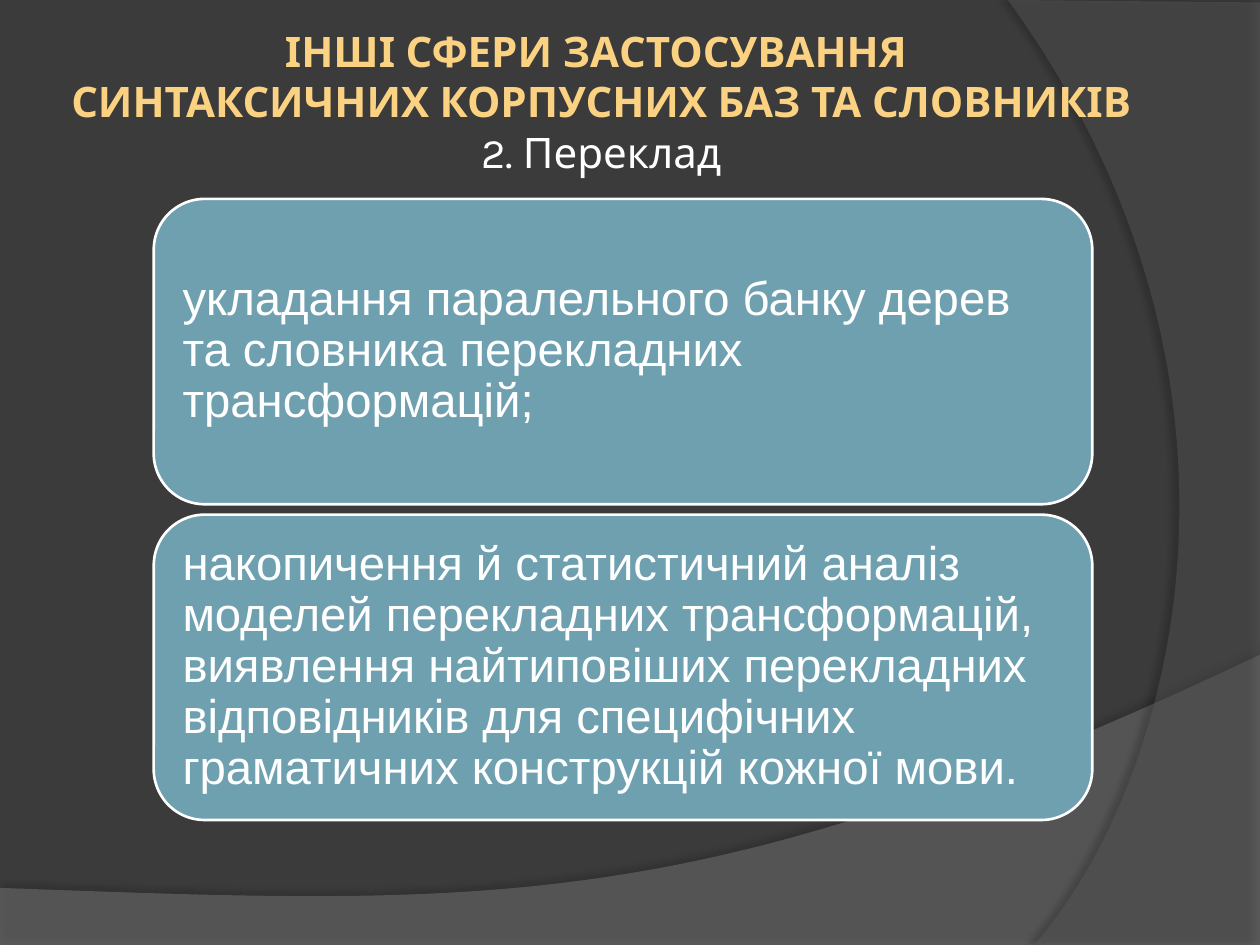
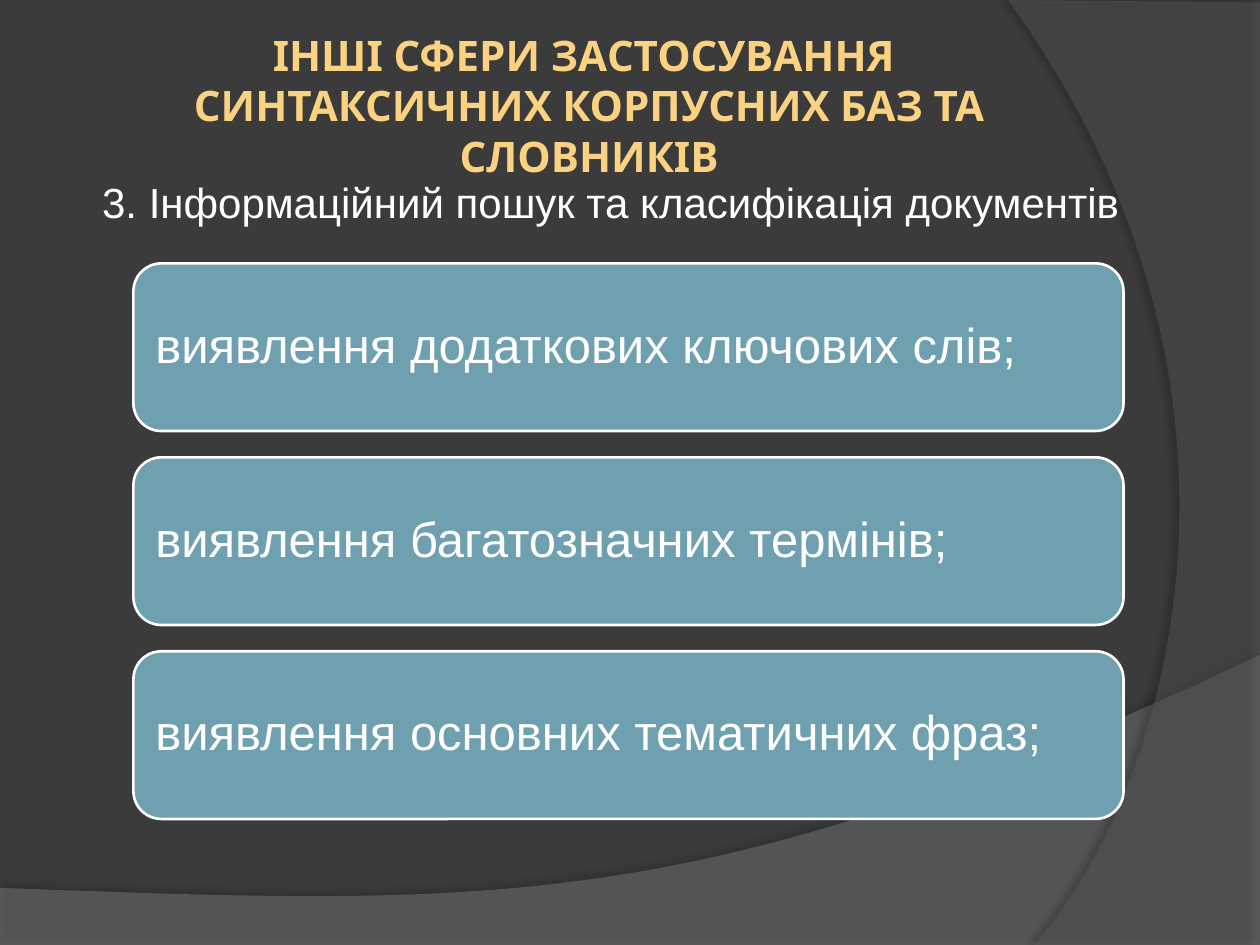
from dataclasses import dataclass

import pptx
import pptx.dml.color
import pptx.enum.shapes
import pptx.enum.text
import pptx.oxml.ns
import pptx.util
from lxml import etree

Cm = pptx.util.Cm
Pt = pptx.util.Pt
ANCHOR = pptx.enum.text.MSO_ANCHOR
ALIGN = pptx.enum.text.PP_ALIGN


@dataclass(frozen=True)
class Theme:
    background: str = "3B3B3B"
    wave: str = "7F7F7F"
    arc: str = "5E5E5E"
    shadow: str = "000000"
    title: str = "FBD281"
    text: str = "FFFFFF"
    card: str = "6EA0B0"
    title_font: str = "Karla"
    body_font: str = "Arial"
    title_size: int = 24
    card_line: float = 1.5


@dataclass(frozen=True)
class Box:
    """A region in centimetres."""
    left: float
    top: float
    width: float
    height: float

    def lengths(self):
        return [Cm(side) for side in (self.left, self.top, self.width, self.height)]


THEME = Theme()
PAGE = Box(0, 0, 25.4, 19.05)
HEADING = "ІНШІ СФЕРИ ЗАСТОСУВАННЯ \vСИНТАКСИЧНИХ КОРПУСНИХ БАЗ ТА СЛОВНИКІВ"


def rgb(colour):
    return pptx.dml.color.RGBColor.from_string(colour)


def style_run(run, font, size, colour, bold=False):
    run.font.name = font
    run.font.size = Pt(size)
    run.font.color.rgb = rgb(colour)
    run.font.bold = bold


def set_insets(frame, inset):
    frame.margin_left = frame.margin_right = Cm(inset)
    frame.margin_top = frame.margin_bottom = Cm(inset)


def add_text_frame(page, box, anchor, inset):
    frame = page.shapes.add_textbox(*box.lengths()).text_frame
    frame.word_wrap = True
    frame.vertical_anchor = anchor
    set_insets(frame, inset)
    return frame


def curve_points(start, control_1, control_2, end, steps=48):
    """Points along a cubic curve, both ends included."""
    points = []
    for step in range(steps + 1):
        t = step / steps
        weights = ((1 - t) ** 3, 3 * t * (1 - t) ** 2, 3 * t ** 2 * (1 - t), t ** 3)
        corners = (start, control_1, control_2, end)
        points.append(tuple(sum(weight * corner[axis] for weight, corner in zip(weights, corners))
                            for axis in (0, 1)))
    return points


def add_band(page, box, points, colour, opacity, shadow_opacity, distance, direction):
    """A translucent outline with a soft shadow; opacities are in percent."""
    spots = [(Cm(box.left + x), Cm(box.top + y)) for x, y in points]
    builder = page.shapes.build_freeform(*spots[0])
    builder.add_line_segments(spots[1:], close=True)
    band = builder.convert_to_shape()
    band.line.fill.background()
    band.fill.solid()
    band.fill.fore_color.rgb = rgb(colour)
    band.shadow.inherit = False

    qn = pptx.oxml.ns.qn
    properties = band.fill._xPr
    fill_colour = properties.find(qn("a:solidFill")).find(qn("a:srgbClr"))
    etree.SubElement(fill_colour, qn("a:alpha"), val=str(opacity * 1000))
    shadow = etree.SubElement(properties.find(qn("a:effectLst")), qn("a:outerShdw"),
                              blurRad=str(Pt(4)), dist=str(Pt(distance)),
                              dir=str(direction * 60000), algn="ctr", rotWithShape="0")
    shadow_colour = etree.SubElement(shadow, qn("a:srgbClr"), val=THEME.shadow)
    etree.SubElement(shadow_colour, qn("a:alpha"), val=str(shadow_opacity * 1000))


def add_backdrop(page, box):
    page.background.fill.solid()
    page.background.fill.fore_color.rgb = rgb(THEME.background)
    right, bottom = box.width, box.height
    wave = [(0, bottom), (right, bottom)]
    wave += curve_points((right, 13.2), (14.2, 18.52), (9.93, 18.26), (0, 17.9))
    add_band(page, box, wave, THEME.wave, 45, 35, 3.5, 270)
    arc = [(right, 0.05), (right, bottom)]
    arc += curve_points((20.85, bottom), (23.75, 15.72), (25.86, 7.62), (20.32, 0))
    add_band(page, box, arc, THEME.arc, 40, 45, 4, 180)


def add_title(page, box, topic=None):
    """The shared heading, with an optional topic on its last line."""
    frame = add_text_frame(page, box, ANCHOR.MIDDLE, 0.13)
    para = frame.paragraphs[0]
    para.text = HEADING
    para.alignment = ALIGN.CENTER
    for run in para.runs:
        style_run(run, THEME.title_font, THEME.title_size, THEME.title, bold=True)
    if topic:
        para.add_line_break()
        span = para.add_run()
        span.text = topic
        style_run(span, THEME.title_font, THEME.title_size, THEME.text)


def add_subtitle(page, box, topic):
    frame = add_text_frame(page, box, ANCHOR.TOP, 0.13)
    frame.margin_left = Cm(0.36)
    frame.text = topic
    style_run(frame.paragraphs[0].runs[0], THEME.body_font, THEME.title_size, THEME.text)


def add_card(page, box, text, size):
    card = page.shapes.add_shape(pptx.enum.shapes.MSO_SHAPE.ROUNDED_RECTANGLE, *box.lengths())
    card.shadow.inherit = False
    card.fill.solid()
    card.fill.fore_color.rgb = rgb(THEME.card)
    card.line.color.rgb = rgb(THEME.text)
    card.line.width = Pt(THEME.card_line)
    frame = card.text_frame
    frame.word_wrap = True
    frame.vertical_anchor = ANCHOR.MIDDLE
    set_insets(frame, 0.28)
    frame.text = text
    para = frame.paragraphs[0]
    para.alignment = ALIGN.LEFT
    para.line_spacing = 0.9
    style_run(para.runs[0], THEME.body_font, size, THEME.text)


def add_card_stack(page, box, texts, gap, size):
    """Equal cards, one below the other, that fill the box."""
    height = (box.height - gap * (len(texts) - 1)) / len(texts)
    for index, text in enumerate(texts):
        top = box.top + index * (height + gap)
        add_card(page, Box(box.left, top, box.width, height), text, size)


def add_page(deck):
    page = deck.slides.add_slide(deck.slide_layouts[6])
    add_backdrop(page, PAGE)
    return page


def build_translation_page(deck):
    page = add_page(deck)
    add_title(page, Box(1.27, 0.46, 21.7, 3.15), "2. Переклад")
    add_card_stack(page, Box(3.1, 4.01, 18.92, 12.52), [
        "укладання паралельного банку дерев та словника перекладних трансформацій;",
        "накопичення й статистичний аналіз моделей перекладних трансформацій, "
        "виявлення найтиповіших перекладних відповідників для специфічних "
        "граматичних конструкцій кожної мови.",
    ], gap=0.21, size=27)


def build_search_page(deck):
    page = add_page(deck)
    add_title(page, Box(1.5, 0.53, 20.75, 3.18))
    add_card_stack(page, Box(2.69, 5.31, 19.96, 11.2), [
        "виявлення додаткових ключових слів;",
        "виявлення багатозначних термінів;",
        "виявлення основних тематичних фраз;",
    ], gap=0.53, size=28)
    add_subtitle(page, Box(1.7, 3.43, 22.8, 1.5),
                 "3. Інформаційний пошук та класифікація документів")


def main():
    deck = pptx.Presentation()
    deck.slide_width = Cm(PAGE.width)
    deck.slide_height = Cm(PAGE.height)
    build_translation_page(deck)
    build_search_page(deck)
    deck.save("out.pptx")


if __name__ == "__main__":
    main()
